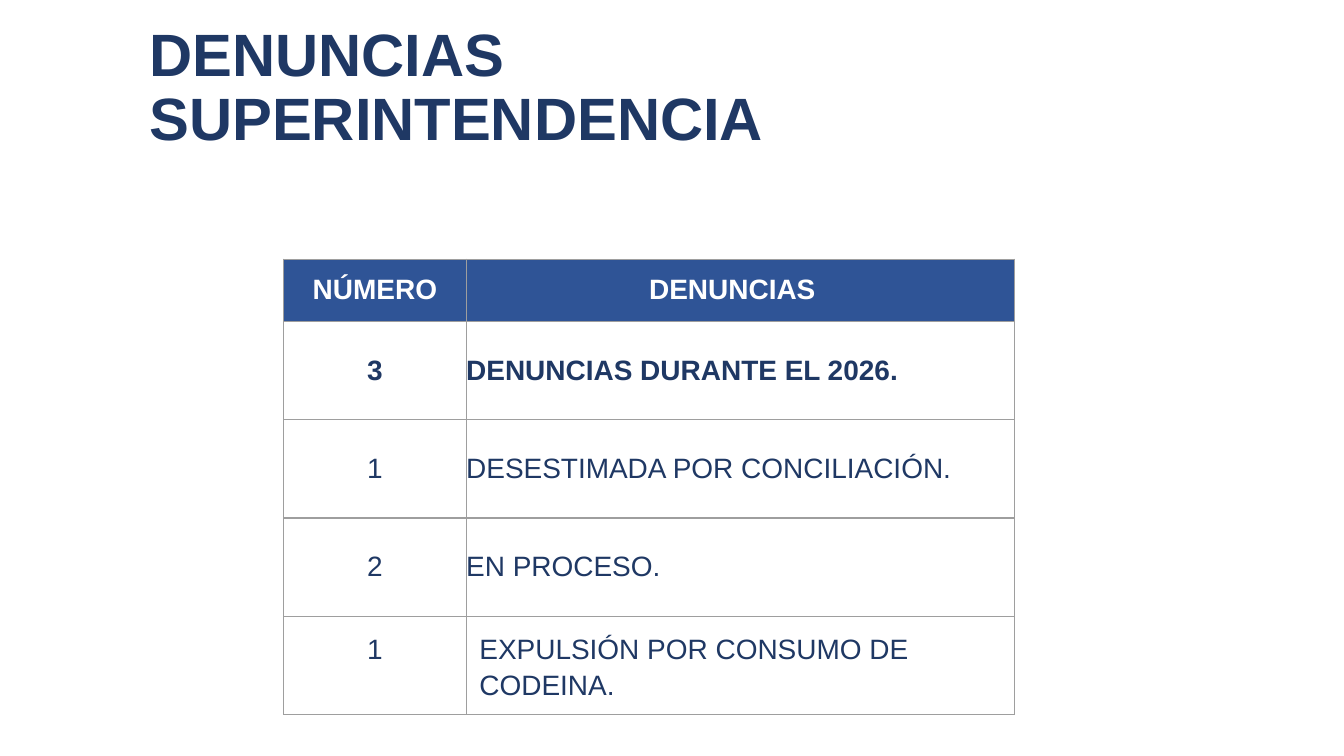
"""Build a slide with a table of complaints filed with the authority."""
import pptx
import pptx.dml.color
import pptx.enum.text
import pptx.oxml
import pptx.oxml.ns
import pptx.util

Cm = pptx.util.Cm
Pt = pptx.util.Pt
RGBColor = pptx.dml.color.RGBColor
Align = pptx.enum.text.PP_ALIGN
Anchor = pptx.enum.text.MSO_ANCHOR

NAVY = RGBColor(0x1F, 0x38, 0x64)
BLUE = RGBColor(0x2F, 0x54, 0x96)
WHITE = RGBColor(0xFF, 0xFF, 0xFF)
GREY = RGBColor(0x9E, 0x9E, 0x9E)

TITLE = "DENUNCIAS SUPERINTENDENCIA"
ROWS = [
    ("NÚMERO", "DENUNCIAS"),
    ("3", "DENUNCIAS DURANTE EL 2026."),
    ("1", "DESESTIMADA POR CONCILIACIÓN."),
    ("2", "EN PROCESO."),
    ("1", "EXPULSIÓN POR CONSUMO DE CODEINA."),
]
COLUMN_WIDTHS = [Cm(3.45), Cm(10.36)]
HEADER_HEIGHT, ROW_HEIGHT = Cm(1.17), Cm(1.86)
BORDER_WIDTH = Pt(0.75)

TITLE_BOX = {"left": Cm(2.64), "top": Cm(0.3), "width": Cm(18.9), "height": Cm(2.77)}
TITLE_FRAME = {"margin_left": Cm(0.18), "margin_right": Cm(0.18), "margin_top": Cm(0.1),
               "margin_bottom": Cm(0.1), "vertical_anchor": Anchor.MIDDLE, "word_wrap": True,
               "auto_size": pptx.enum.text.MSO_AUTO_SIZE.NONE}
TITLE_FONT = {"name": "Arial", "size": Pt(32), "bold": True}
CELL_FONT = {"name": "Arial", "size": Pt(15)}
SIDES = ("left", "right", "top", "bottom")


def apply(target, values):
    for name, value in values.items():
        setattr(target, name, value)


def write(frame, text, font, color, paragraph_format):
    para = frame.paragraphs[0]
    apply(para, paragraph_format)
    span = para.add_run()
    span.text = text
    apply(span.font, font)
    span.font.color.rgb = color


def add_borders(cell):
    properties = cell._tc.get_or_add_tcPr()
    for position, side in enumerate("LRTB"):
        line = pptx.oxml.parse_xml(
            f'<a:ln{side} {pptx.oxml.ns.nsdecls("a")} w="{BORDER_WIDTH}">'
            f'<a:solidFill><a:srgbClr val="{GREY}"/></a:solidFill></a:ln{side}>')
        properties.insert(position, line)


def fill_cell(cell, text, row, column):
    header, last = row == 0, row == len(ROWS) - 1
    margin = Cm(0.25) if last else 0
    apply(cell, {f"margin_{side}": margin for side in SIDES})
    if header and column == 1:
        cell.margin_right = Cm(0.3)
    cell.vertical_anchor = Anchor.TOP if last else Anchor.MIDDLE
    if header:
        cell.fill.solid()
        cell.fill.fore_color.rgb = BLUE
    else:
        cell.fill.background()
    centred = header or column == 0
    write(cell.text_frame, text, {**CELL_FONT, "bold": row < 2}, WHITE if header else NAVY,
          {"alignment": Align.CENTER if centred else Align.LEFT,
           "line_spacing": 1.15 if last else 1.0})
    add_borders(cell)


def main():
    deck = pptx.Presentation()
    deck.slide_width, deck.slide_height = Cm(25.4), Cm(14.29)
    page = deck.slides.add_slide(deck.slide_layouts[5])

    title = page.shapes.title
    apply(title, TITLE_BOX)
    apply(title.text_frame, TITLE_FRAME)
    write(title.text_frame, TITLE, TITLE_FONT, NAVY,
          {"alignment": Align.LEFT, "line_spacing": 0.9})

    heights = [HEADER_HEIGHT] + [ROW_HEIGHT] * (len(ROWS) - 1)
    table = page.shapes.add_table(len(ROWS), len(COLUMN_WIDTHS), Cm(5.36), Cm(4.9),
                                  sum(COLUMN_WIDTHS), sum(heights)).table
    apply(table, {"first_row": False, "horz_banding": False})
    for column, width in zip(table.columns, COLUMN_WIDTHS):
        column.width = width
    for row, (texts, height) in enumerate(zip(ROWS, heights)):
        table.rows[row].height = height
        for column, text in enumerate(texts):
            fill_cell(table.cell(row, column), text, row, column)

    deck.save("out.pptx")


if __name__ == "__main__":
    main()
